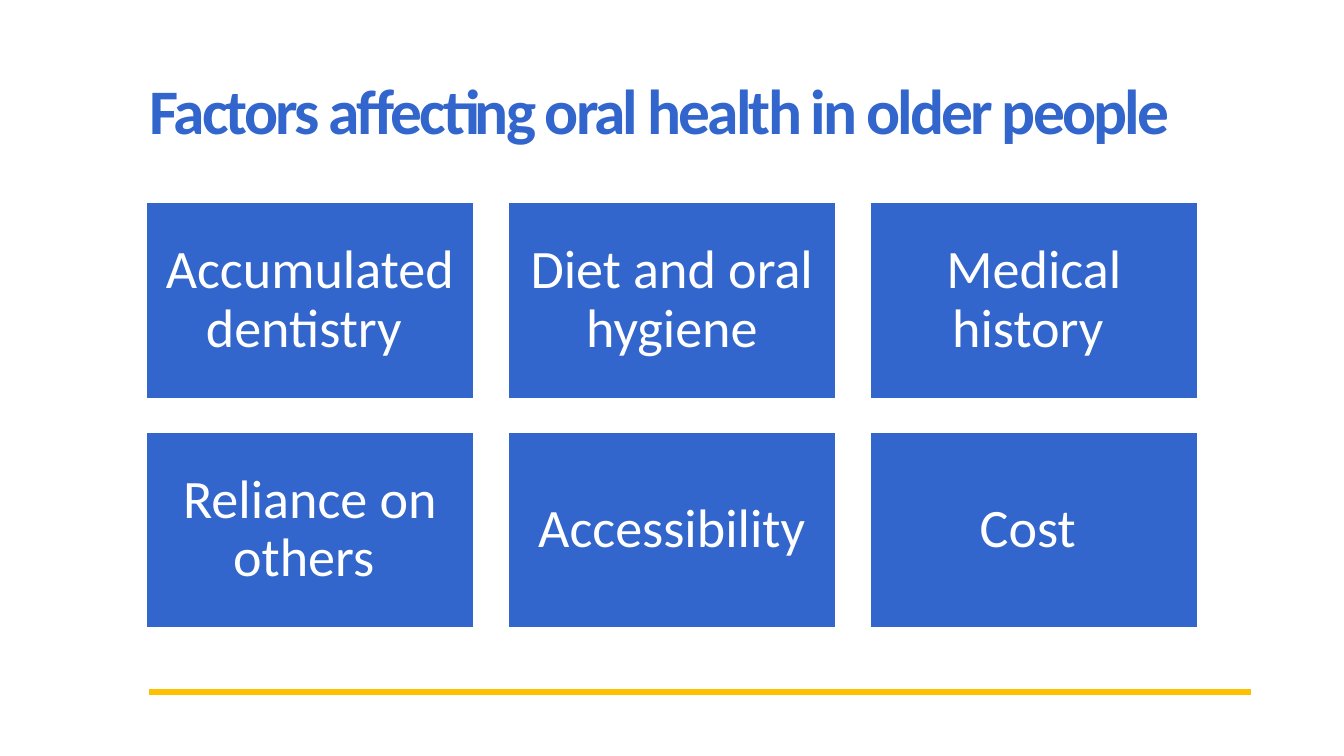
from dataclasses import dataclass

from lxml.etree import SubElement
from pptx import Presentation
from pptx.dml.color import RGBColor
from pptx.enum.shapes import MSO_CONNECTOR, MSO_SHAPE
from pptx.enum.text import MSO_ANCHOR, PP_ALIGN
from pptx.oxml.ns import qn
from pptx.util import Inches, Pt


@dataclass(frozen=True)
class Theme:
    """Colours, font and type sizes of the slide."""
    blue: RGBColor = RGBColor(0x33, 0x66, 0xCC)
    gold: RGBColor = RGBColor(0xFF, 0xC0, 0x00)
    white: RGBColor = RGBColor(0xFF, 0xFF, 0xFF)
    font: str = "Calibri"
    title_size: int = 34
    tile_size: int = 29


THEME = Theme()
WIDTH = 10
HEIGHT = WIDTH * 9 / 16
COLS, ROWS = 3, 2
TITLE = "Factors affecting oral health in older people"
FACTORS = ["Accumulated dentistry ", "Diet and oral hygiene", "Medical history ",
           "Reliance on others ", "Accessibility", "Cost "]


def write(sp, text, size, color, inset, after):
    """Write one middle-anchored paragraph into a shape and return it with its run."""
    tf = sp.text_frame
    tf.word_wrap = True
    tf.vertical_anchor = MSO_ANCHOR.MIDDLE
    tf.margin_left = tf.margin_right = tf.margin_top = tf.margin_bottom = Inches(inset)
    p = tf.paragraphs[0]
    p.line_spacing = 0.9
    p.space_after = Pt(after)
    r = p.add_run()
    r.text = text
    r.font.name = THEME.font
    r.font.size = Pt(size)
    r.font.color.rgb = color
    return p, r


def add_title(s, x, y, w, h):
    """Place the bold, tightly spaced title in its box."""
    sp = s.shapes.add_textbox(Inches(x), Inches(y), Inches(w), Inches(h))
    p, r = write(sp, TITLE, THEME.title_size, THEME.blue, 0, 6)
    r.font.bold = True
    r.font._element.set("spc", "-150")


def add_tiles(s, x, y, w, h, gap):
    """Fill the box with an evenly spaced grid of factor tiles."""
    tile_w = (w - gap * (COLS - 1)) / COLS
    tile_h = (h - gap * (ROWS - 1)) / ROWS
    for i, factor in enumerate(FACTORS):
        row, col = divmod(i, COLS)
        sp = s.shapes.add_shape(
            MSO_SHAPE.RECTANGLE,
            Inches(x + col * (tile_w + gap)), Inches(y + row * (tile_h + gap)),
            Inches(tile_w), Inches(tile_h))
        sp.shadow.inherit = False
        sp.fill.solid()
        sp.fill.fore_color.rgb = THEME.blue
        sp.line.color.rgb = THEME.white
        sp.line.width = Pt(1.5)
        p, r = write(sp, factor, THEME.tile_size, THEME.white, 0.12, 10)
        p.alignment = PP_ALIGN.CENTER


def add_rule(s, x, y, w):
    """Draw the gold rule at the foot of the slide."""
    line = s.shapes.add_connector(
        MSO_CONNECTOR.STRAIGHT, Inches(x), Inches(y), Inches(x + w), Inches(y))
    line.line.color.rgb = THEME.gold
    line.line.width = Pt(3)
    SubElement(line._element.spPr, qn("a:effectLst"))


def main():
    """Build and save the slide."""
    prs = Presentation()
    prs.slide_width, prs.slide_height = Inches(WIDTH), Inches(HEIGHT)
    s = prs.slides.add_slide(prs.slide_layouts[6])
    left, span = 1.11, 0.82 * WIDTH
    add_rule(s, left, 5.15, span)
    add_title(s, left, 0.3, span, 1.09)
    add_tiles(s, 1.08, 1.5, 7.84, 3.18, 0.24)
    prs.save("out.pptx")


if __name__ == "__main__":
    main()
